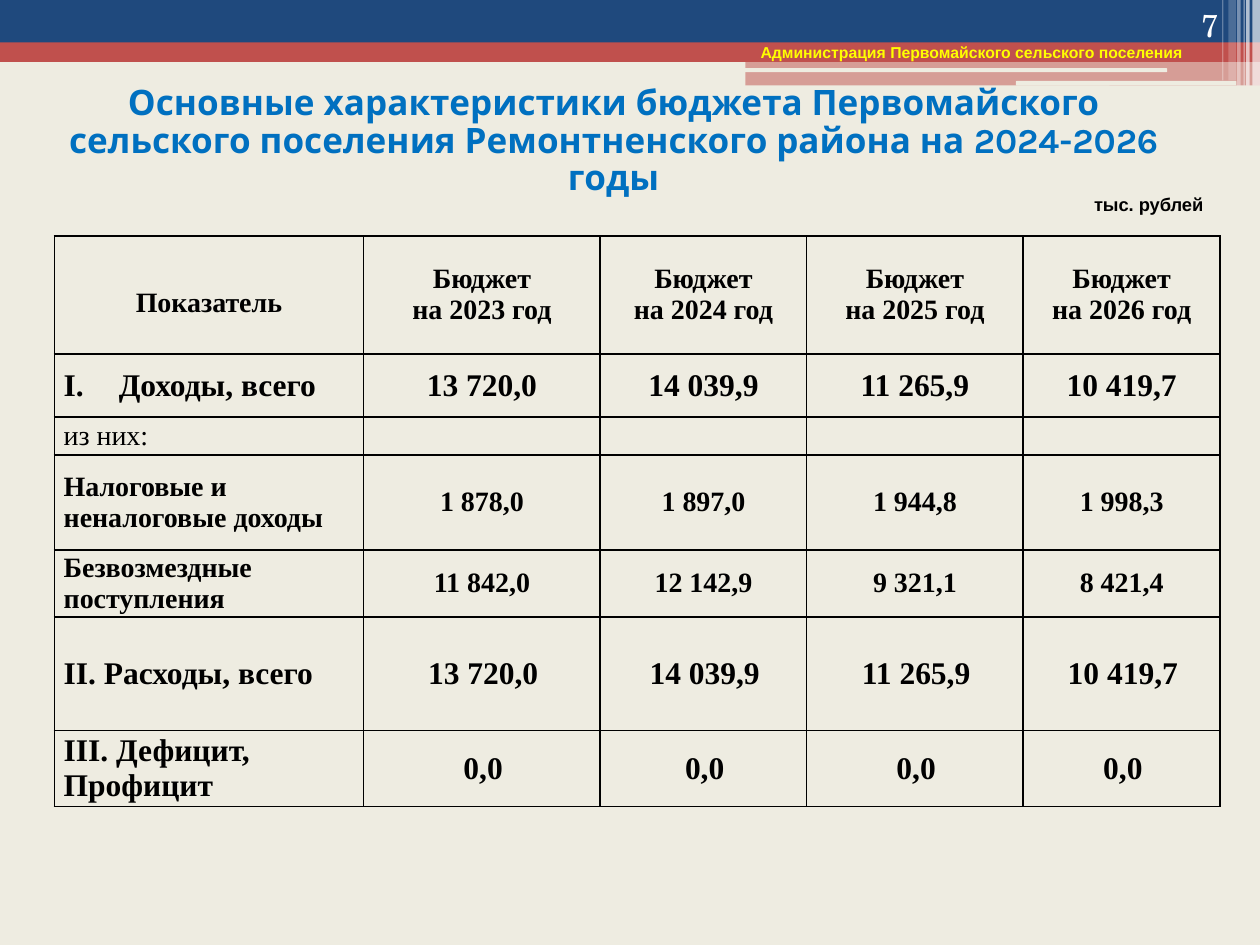
from pptx import Presentation
from pptx.dml.color import RGBColor
from pptx.enum.shapes import MSO_SHAPE as Geo
from pptx.enum.text import MSO_ANCHOR as Anc, PP_ALIGN as Al
from pptx.oxml import parse_xml
from pptx.oxml.ns import nsdecls, qn
from pptx.util import Pt

NAVY, RED, CREAM, WHITE, BLACK = "1F497D", "C0504D", "EEECE1", "FFFFFF", "000000"
TIMES = "Times New Roman"

BANDS = [
    (0, 28.8, 720, 6.5, RED, 50),
    (0, 0, 720, 24.5, NAVY, 100),
    (0, 24.2, 720, 11.2, RED, 100),
    (426, 28, 294, 7.2, RED, 100),
    (426, 34.8, 294, 14, RED, 50),
]
PILLS = [(425.5, 39, 241.5, 2.2), (580.5, 46.3, 126, 2.6)]
STRIPES = [
    (715.7, 4.3, 49, 65), (712.1, 2, 49, 65), (710.6, 0.7, 49, 60),
    (707, 2, 49, 40), (702, 4.3, 46, 20), (698.4, 0.7, 46, 30),
]

TITLE = ("Основные характеристики бюджета Первомайского сельского поселения "
         "Ремонтненского района на 2024-2026 годы")
NOTES = [
    ("7", (643.7, 0, 59.8, 28.8), Al.RIGHT, Anc.BOTTOM,
     dict(size=18, name="TeX Gyre Schola", color=WHITE)),
    ("Администрация Первомайского сельского поселения", (427.5, 20.7, 261.5, 18),
     Al.LEFT, Anc.TOP, dict(size=9, name="Arial", color="FFFF00", bold=True)),
    ("тыс. рублей", (592.6, 106.6, 102.2, 20), Al.RIGHT, Anc.TOP,
     dict(size=10.5, name="Arial", color=BLACK, bold=True)),
]

YEARS = [2023, 2024, 2025, 2026]
HEAD = ["Показатель"] + [f"Бюджет\nна {year} год" for year in YEARS]
TOTALS = ["13 720,0", "14 039,9", "11 265,9", "10 419,7"]
ROWS = [
    (67.5, 16, True, -5, HEAD),
    (36, 18, True, -5, ["Доходы, всего"] + TOTALS),
    (21.6, 16, False, 0, ["из них:", "", "", "", ""]),
    (54.3, 16, True, -5, ["Налоговые и неналоговые доходы",
                          "1 878,0", "1 897,0", "1 944,8", "1 998,3"]),
    (38.4, 16, True, -5, ["Безвозмездные поступления",
                          "11 842,0", "12 142,9", "9 321,1", "8 421,4"]),
    (65, 18, True, 1.4, ["II. Расходы, всего"] + TOTALS),
    (43.4, 18, True, 1.4, ["III. Дефицит, Профицит"] + ["0,0"] * 4),
]
COLS = [176.8, 135.2, 118, 123.7, 112.6]
PAD = 5.4


def rgb(code):
    return RGBColor.from_string(code)


def style(font, form):
    for key, val in form.items():
        if key == "color":
            font.color.rgb = rgb(val)
        else:
            setattr(font, key, Pt(val) if key == "size" else val)


def write(frame, text, align, form):
    for i, line in enumerate(text.split("\n")):
        para = frame.add_paragraph() if i else frame.paragraphs[0]
        para.alignment = align
        run = para.add_run()
        run.text = line
        style(run.font, form)


def block(slide, box, color, alpha=100, geo=Geo.RECTANGLE):
    shape = slide.shapes.add_shape(geo, *map(Pt, box))
    shape.shadow.inherit = False
    shape.fill.solid()
    shape.fill.fore_color.rgb = rgb(color)
    shape.line.fill.background()
    if alpha < 100:
        tint = shape.element.spPr.find(".//" + qn("a:srgbClr"))
        tint.append(parse_xml(f'<a:alpha {nsdecls("a")} val="{alpha * 1000}"/>'))


def note(slide, text, box, align, anchor, form):
    frame = slide.shapes.add_textbox(*map(Pt, box)).text_frame
    frame.word_wrap = True
    frame.vertical_anchor = anchor
    write(frame, text, align, form)


def head(slide):
    title = slide.shapes.title
    title.left, title.top, title.width, title.height = map(Pt, (16.6, 54.7, 668, 52.6))
    frame = title.text_frame
    frame.word_wrap = True
    frame.vertical_anchor = Anc.MIDDLE
    write(frame, TITLE, Al.CENTER, dict(size=20, name="Karla", color="0070C0", bold=True))
    frame.paragraphs[0].line_spacing = 0.9
    title.element.getparent().append(title.element)


def indent(para, left, first):
    props = para._p.get_or_add_pPr()
    props.set("marL", str(Pt(left)))
    props.set("indent", str(Pt(first)))
    return props


def border(props):
    for i, side in enumerate(("lnL", "lnR", "lnT", "lnB")):
        props.insert(i, parse_xml(
            f'<a:{side} {nsdecls("a")} w="{Pt(1)}"><a:solidFill>'
            f'<a:srgbClr val="{BLACK}"/></a:solidFill></a:{side}>'))


def grid(slide):
    high = sum(row[0] for row in ROWS)
    box = map(Pt, (31, 134.8, sum(COLS), high))
    holder = slide.shapes.add_table(len(ROWS), len(COLS), *box)
    table = holder.table
    table.first_row = table.horz_banding = False
    for col, wide in zip(table.columns, COLS):
        col.width = Pt(wide)
    for r, (tall, size, bold, shift, texts) in enumerate(ROWS):
        table.rows[r].height = Pt(tall)
        form = dict(size=size, name=TIMES, color=BLACK, bold=bold)
        for c, text in enumerate(texts):
            cell = table.cell(r, c)
            cell.fill.background()
            cell.vertical_anchor = Anc.MIDDLE
            cell.margin_left = cell.margin_right = Pt(PAD)
            cell.margin_top = cell.margin_bottom = 0
            write(cell.text_frame, text, Al.CENTER if c or not r else Al.LEFT, form)
            if c and r:
                indent(cell.text_frame.paragraphs[0], 0, shift)
    first = table.cell(0, 0).text_frame.paragraphs[0]
    first.line_spacing = 1.5
    indent(first, 0, -5)
    income = indent(table.cell(1, 0).text_frame.paragraphs[0], 31.5, -31.5)
    income.append(parse_xml(f'<a:buAutoNum {nsdecls("a")} type="romanUcPeriod"/>'))
    for props in holder.element.iter(qn("a:tcPr")):
        border(props)


def main():
    deck = Presentation()
    deck.slide_width, deck.slide_height = Pt(720), Pt(540)
    slide = deck.slides.add_slide(deck.slide_layouts[5])
    slide.background.fill.solid()
    slide.background.fill.fore_color.rgb = rgb(CREAM)
    for *box, color, alpha in BANDS:
        block(slide, box, color, alpha)
    for box in PILLS:
        block(slide, box, CREAM, geo=Geo.ROUNDED_RECTANGLE)
    for left, wide, tall, alpha in STRIPES:
        block(slide, (left, 0, wide, tall), WHITE, alpha)
    head(slide)
    grid(slide)
    for item in NOTES:
        note(slide, *item)
    deck.save("out.pptx")


if __name__ == "__main__":
    main()
